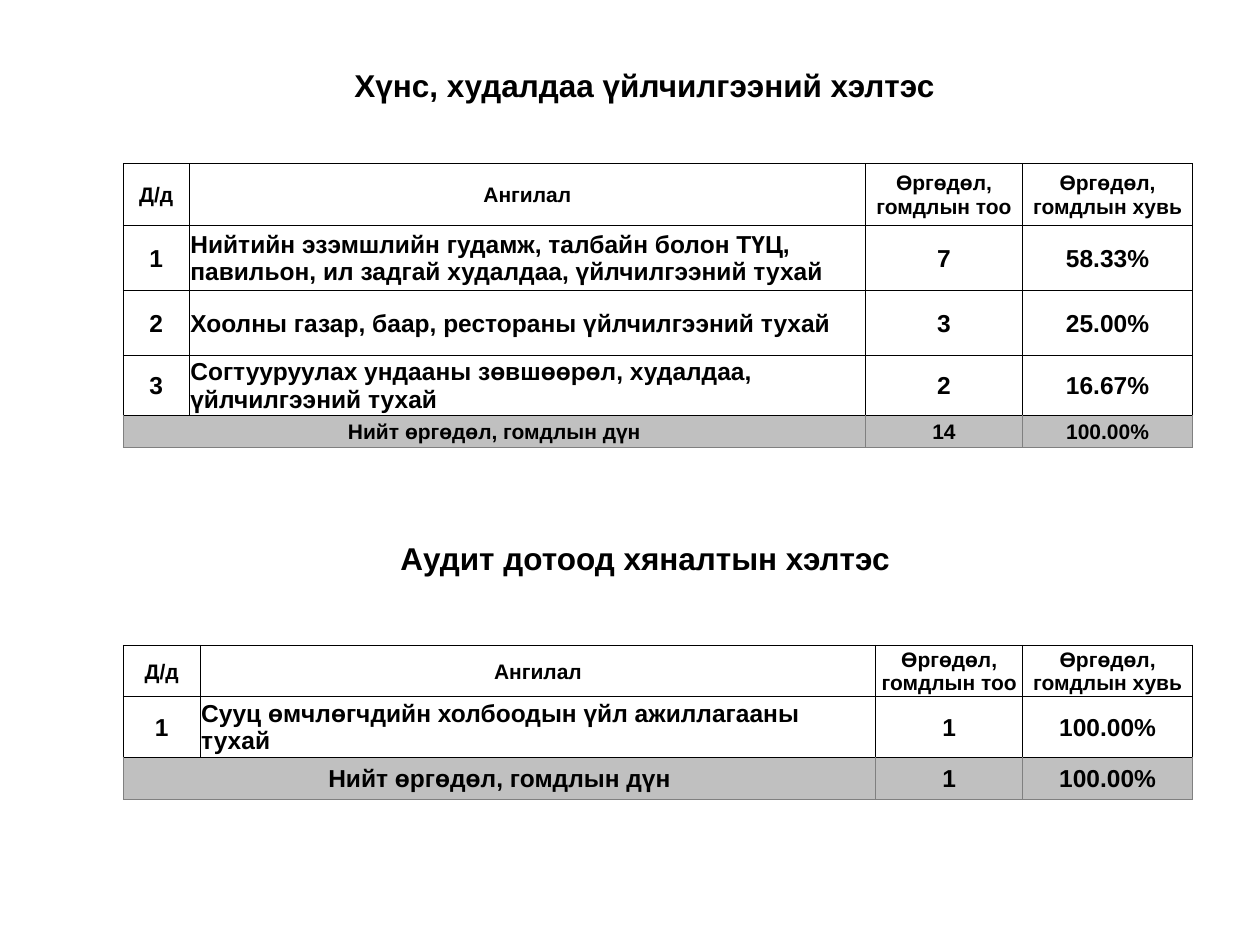
from lxml import etree
from pptx import Presentation
from pptx.dml.color import RGBColor
from pptx.enum.text import MSO_ANCHOR, PP_ALIGN
from pptx.oxml.ns import qn
from pptx.util import Pt

MIDDLE = MSO_ANCHOR.MIDDLE
CENTER, LEFT = PP_ALIGN.CENTER, PP_ALIGN.LEFT
FONT = "Arial"
COLORS = {"text": "000000", "line": "000000", "total_line": "808080",
          "cell": "FFFFFF", "total": "C0C0C0"}
TABLE_LEFT = 70.5
HEADER = ("Д/д", "Ангилал", "Өргөдөл, гомдлын тоо", "Өргөдөл, гомдлын хувь")
TOTAL = "Нийт өргөдөл, гомдлын дүн"
FOOD_ROWS = (
    ("1", "Нийтийн эзэмшлийн гудамж, талбайн болон ТҮЦ, павильон, ил задгай "
          "худалдаа, үйлчилгээний тухай", "7", "58.33%"),
    ("2", "Хоолны газар, баар, рестораны үйлчилгээний тухай", "3", "25.00%"),
    ("3", "Согтууруулах ундааны зөвшөөрөл, худалдаа, үйлчилгээний тухай", "2", "16.67%"),
    (TOTAL, "", "14", "100.00%"),
)
AUDIT_ROWS = (
    ("1", "Сууц өмчлөгчдийн холбоодын үйл ажиллагааны тухай", "1", "100.00%"),
    (TOTAL, "", "1", "100.00%"),
)


def write_text(frame, text, size, align=CENTER, spacing=None):
    """Write one bold paragraph into a text frame."""
    frame.word_wrap = True
    para = frame.paragraphs[0]
    para.alignment = align
    if spacing:
        para.line_spacing = spacing
    span = para.add_run()
    span.text = text
    span.font.name = FONT
    span.font.size = Pt(size)
    span.font.bold = True
    span.font.color.rgb = RGBColor.from_string(COLORS["text"])


def add_title(page, text, left, top, width, height):
    """Add a centred section title."""
    box = page.shapes.add_textbox(Pt(left), Pt(top), Pt(width), Pt(height))
    box.text_frame.vertical_anchor = MIDDLE
    write_text(box.text_frame, text, size=18, spacing=0.9)


def set_border(cell, side, color):
    """Draw one thin solid border of a cell."""
    line = etree.SubElement(cell._tc.get_or_add_tcPr(), qn(f"a:ln{side}"), w=str(Pt(0.5)))
    fill = etree.SubElement(line, qn("a:solidFill"))
    etree.SubElement(fill, qn("a:srgbClr"), val=color)


def format_cell(cell, is_total):
    """Set the margins, borders and fill of a cell."""
    cell.vertical_anchor = MIDDLE
    cell.margin_left = cell.margin_right = cell.margin_top = Pt(0.7)
    cell.margin_bottom = 0
    for side in "LRTB":
        gray = is_total and side != "T"
        set_border(cell, side, COLORS["total_line" if gray else "line"])
    cell.fill.solid()
    cell.fill.fore_color.rgb = RGBColor.from_string(COLORS["total" if is_total else "cell"])


def add_complaint_table(page, rows, top, widths, heights, total_size):
    """Add a table with a header, numbered rows and a merged total row."""
    rows = (HEADER, *rows)
    last = len(rows) - 1
    table = page.shapes.add_table(len(rows), len(widths), Pt(TABLE_LEFT), Pt(top),
                                  Pt(sum(widths)), Pt(sum(heights))).table
    table.first_row = table.horz_banding = False
    for column, width in zip(table.columns, widths):
        column.width = Pt(width)
    for row, height in zip(table.rows, heights):
        row.height = Pt(height)
    table.cell(last, 0).merge(table.cell(last, 1))
    for i, values in enumerate(rows):
        size = {0: 12, last: total_size}.get(i, 14)
        for j, value in enumerate(values):
            cell = table.cell(i, j)
            format_cell(cell, is_total=i == last)
            if value:
                align = LEFT if j == 1 and i > 0 else CENTER
                write_text(cell.text_frame, value, size=size, align=align)


def main():
    """Build the slide and save it."""
    deck = Presentation()
    deck.slide_width, deck.slide_height = Pt(720), Pt(540)
    page = deck.slides.add_slide(deck.slide_layouts[6])
    add_title(page, "Хүнс, худалдаа үйлчилгээний хэлтэс ", 60.5, 27.4, 620.6, 44.6)
    add_complaint_table(page, FOOD_ROWS, top=93.4, widths=(37.6, 386.5, 89.8, 97.2),
                        heights=(35.4, 37.2, 37.2, 29.5, 18), total_size=12)
    add_title(page, "Аудит дотоод хяналтын хэлтэс ", 65.5, 305.3, 611.3, 30.2)
    add_complaint_table(page, AUDIT_ROWS, top=368.7, widths=(43.8, 386.2, 83.9, 97.2),
                        heights=(29.5, 27.4, 24), total_size=14)
    deck.save("out.pptx")


if __name__ == "__main__":
    main()
